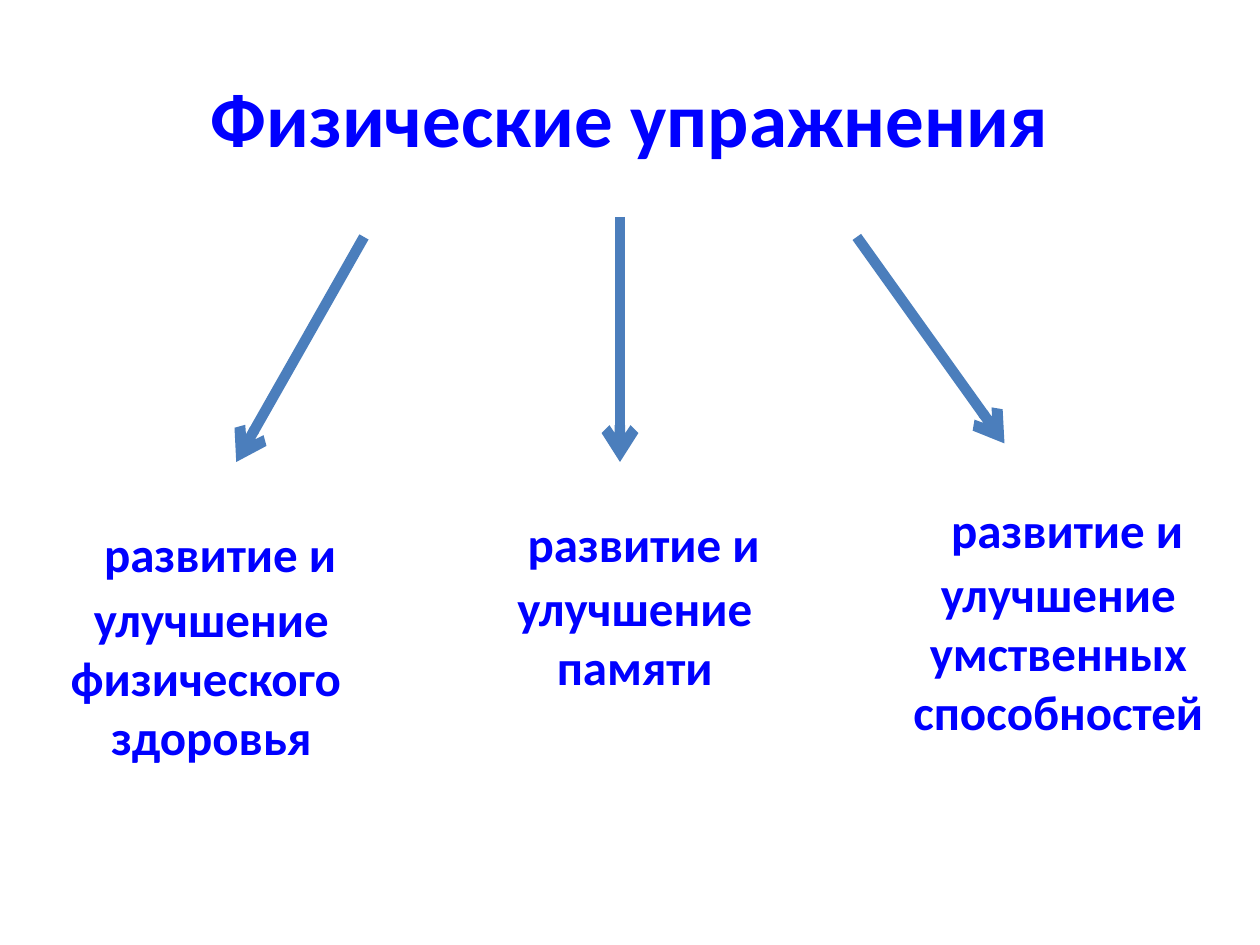
from dataclasses import dataclass

from lxml import etree
from pptx import Presentation
from pptx.dml.color import RGBColor
from pptx.enum.shapes import MSO_CONNECTOR
from pptx.enum.text import MSO_ANCHOR, PP_ALIGN
from pptx.oxml.ns import qn
from pptx.util import Pt

STRAIGHT = MSO_CONNECTOR.STRAIGHT
MIDDLE = MSO_ANCHOR.MIDDLE
CENTER = PP_ALIGN.CENTER

FONT = "Calibri"
TEXT_COLOR = "0000FF"
ARROW_COLOR = "4B7EBC"
TITLE_SIZE = 44
BENEFIT_SIZE = 28
BENEFIT_WIDTH = 196.5


@dataclass
class Benefit:
    """An outcome of exercise and the arrow leading to it, in points."""
    paragraphs: list[str]
    left: float
    top: float
    height: float
    arrow_start: tuple[float, float]
    arrow_end: tuple[float, float]


BENEFITS = [
    Benefit(["развитие и улучшение памяти"],
            264.5, 298, 78.5, (354.3, 124), (354.3, 264)),
    Benefit(["развитие и улучшение физического ", "здоровья"],
            22.5, 292.5, 135.5, (208, 135.4), (135, 264)),
    Benefit(["развитие и улучшение умственных способностей"],
            506.5, 281.5, 129.5, (489.6, 135.4), (574, 253.4)),
]


def color(hex_value: str) -> RGBColor:
    return RGBColor.from_string(hex_value)


def add_run(paragraph, text: str, size: float) -> None:
    run = paragraph.add_run()
    run.text = text
    run.font.name = FONT
    run.font.size = Pt(size)
    run.font.bold = True
    run.font.color.rgb = color(TEXT_COLOR)


def add_arrow(slide, benefit: Benefit) -> None:
    points = (*benefit.arrow_start, *benefit.arrow_end)
    arrow = slide.shapes.add_connector(STRAIGHT, *(Pt(v) for v in points))
    arrow.line.color.rgb = color(ARROW_COLOR)
    arrow.line.width = Pt(6)
    properties = arrow.line._get_or_add_ln()
    etree.SubElement(properties, qn("a:tailEnd"), type="arrow")
    etree.SubElement(arrow._element.spPr, qn("a:effectLst"))


def add_benefit(slide, benefit: Benefit) -> None:
    box = slide.shapes.add_textbox(Pt(benefit.left), Pt(benefit.top),
                                   Pt(BENEFIT_WIDTH), Pt(benefit.height))
    frame = box.text_frame
    frame.word_wrap = True
    frame.vertical_anchor = MIDDLE
    for index, text in enumerate(benefit.paragraphs):
        paragraph = frame.add_paragraph() if index else frame.paragraphs[0]
        paragraph.alignment = CENTER
        if index == 0:
            # The tall leading space sets the height of the first line
            add_run(paragraph, " ", TITLE_SIZE)
        add_run(paragraph, text, BENEFIT_SIZE)


def main() -> None:
    presentation = Presentation()
    presentation.slide_width = Pt(720)
    presentation.slide_height = Pt(540)
    slide = presentation.slides.add_slide(presentation.slide_layouts[5])

    # Title
    title = slide.shapes.title
    title.left, title.top = Pt(36), Pt(21.6)
    title.width, title.height = Pt(648), Pt(90)
    title.text_frame.vertical_anchor = MIDDLE
    heading = title.text_frame.paragraphs[0]
    heading.alignment = CENTER
    add_run(heading, "Физические упражнения", TITLE_SIZE)

    # Arrows and the benefits they lead to
    for benefit in BENEFITS:
        add_arrow(slide, benefit)
        add_benefit(slide, benefit)

    presentation.save("out.pptx")


if __name__ == "__main__":
    main()
